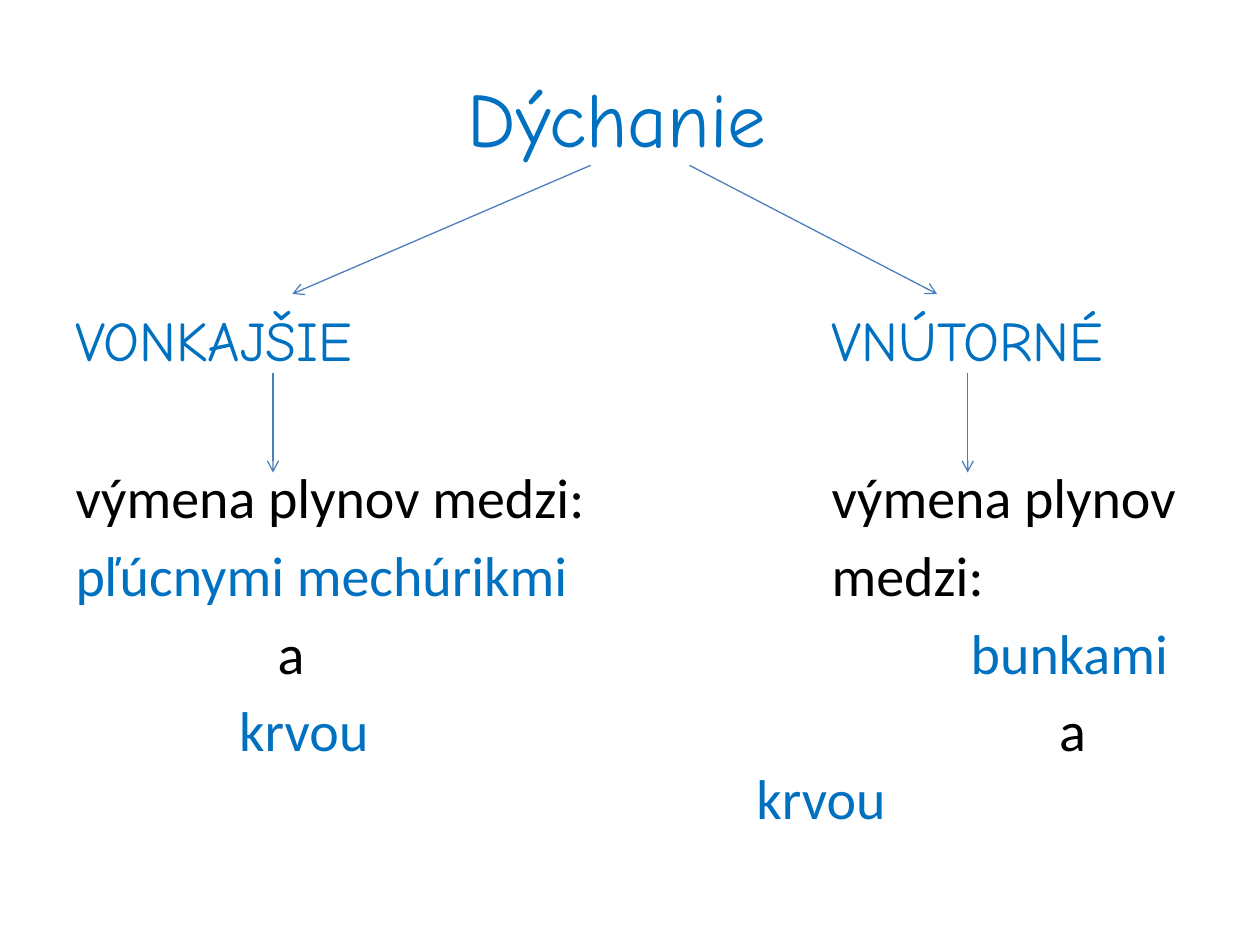
import dataclasses

import lxml.etree
import pptx
import pptx.dml.color
import pptx.enum.shapes
import pptx.enum.text
import pptx.oxml.ns
import pptx.util

Pt = pptx.util.Pt


@dataclasses.dataclass(frozen=True)
class Theme:
    accent: str = "0070C0"
    ink: str = "000000"
    arrow: str = "4B7EBC"
    heading_font: str = "Comic Neue"
    body_font: str = "Calibri"
    title_size: float = 44
    body_size: float = 32
    arrow_width: float = 0.75


def add_text(paragraph, text, *, font, size, color):
    run = paragraph.add_run()
    run.text = text
    run.font.name = font
    run.font.size = Pt(size)
    run.font.color.rgb = pptx.dml.color.RGBColor.from_string(color)


def add_child(parent, tag, **attributes):
    child = lxml.etree.SubElement(parent, pptx.oxml.ns.qn(tag))
    for name, value in attributes.items():
        child.set(name, value)


def set_plain_indent(paragraph, indent):
    """Drop the bullet and start every line at the given indent."""
    properties = paragraph._p.get_or_add_pPr()
    properties.set("marL", str(int(Pt(indent))))
    properties.set("indent", "0")
    add_child(properties, "a:buNone")


class SlideBuilder:
    def __init__(self, slide, theme):
        self.slide = slide
        self.theme = theme

    def place(self, placeholder, left, top, width, height):
        placeholder.left, placeholder.top = Pt(left), Pt(top)
        placeholder.width, placeholder.height = Pt(width), Pt(height)
        frame = placeholder.text_frame
        frame.word_wrap = True
        frame.auto_size = pptx.enum.text.MSO_AUTO_SIZE.NONE
        return frame

    def title(self, text, box):
        frame = self.place(self.slide.shapes.title, *box)
        frame.vertical_anchor = pptx.enum.text.MSO_ANCHOR.MIDDLE
        heading = frame.paragraphs[0]
        heading.alignment = pptx.enum.text.PP_ALIGN.CENTER
        add_text(heading, text, font=self.theme.heading_font,
                 size=self.theme.title_size, color=self.theme.accent)

    def branch(self, position, rows, box, top_inset):
        """Fill one column; a row is (space before, indent, font, colour, text)."""
        frame = self.place(self.slide.placeholders[position], *box)
        frame.margin_top = Pt(top_inset)
        for index, (space, indent, font, color, text) in enumerate(rows):
            line = frame.add_paragraph() if index else frame.paragraphs[0]
            line.space_before = Pt(space)
            set_plain_indent(line, indent)
            add_text(line, text, font=font, size=self.theme.body_size, color=color)

    def arrow(self, start, end):
        connector = self.slide.shapes.add_connector(
            pptx.enum.shapes.MSO_CONNECTOR.STRAIGHT, *map(Pt, start + end))
        connector.line.color.rgb = pptx.dml.color.RGBColor.from_string(self.theme.arrow)
        connector.line.width = Pt(self.theme.arrow_width)
        add_child(connector.line._get_or_add_ln(), "a:tailEnd", type="arrow")
        add_child(connector._element.spPr, "a:effectLst")


def main():
    presentation = pptx.Presentation()
    presentation.slide_width, presentation.slide_height = Pt(720), Pt(540)
    theme = Theme()
    two_content = presentation.slide_layouts[3]
    builder = SlideBuilder(presentation.slides.add_slide(two_content), theme)

    builder.title("Dýchanie ", (36, 21.6, 648, 90))

    row_gap, branch_gap, top_inset = 6, 51.5, 48.5
    heading, body = theme.heading_font, theme.body_font
    accent, ink = theme.accent, theme.ink
    external = [
        (0, 0, heading, accent, "VONKAJŠIE"),
        (branch_gap, 0, body, ink, "výmena plynov medzi:"),
        (row_gap, 0, body, accent, "pľúcnymi mechúrikmi"),
        (row_gap, 115.5, body, ink, "a"),
        (row_gap, 93.5, body, accent, "krvou"),
    ]
    internal = [
        (0, 43, heading, accent, "VNÚTORNÉ"),
        (branch_gap, 43, body, ink, "výmena plynov"),
        (row_gap, 43, body, ink, "medzi:"),
        (row_gap, 122.5, body, accent, "bunkami"),
        (row_gap, 173, body, ink, "a"),
        (0, 0, body, accent, "krvou"),
    ]
    builder.branch(1, external, (36, 126, 380, 376.5), top_inset)
    builder.branch(2, internal, (425, 126, 259, 376.5), top_inset)

    for x in (156, 553):
        builder.arrow((x, 213), (x, 270))
    for start_x, end_x in ((337.5, 167), (394, 535.5)):
        builder.arrow((start_x, 94.5), (end_x, 168))

    presentation.save("out.pptx")


if __name__ == "__main__":
    main()
